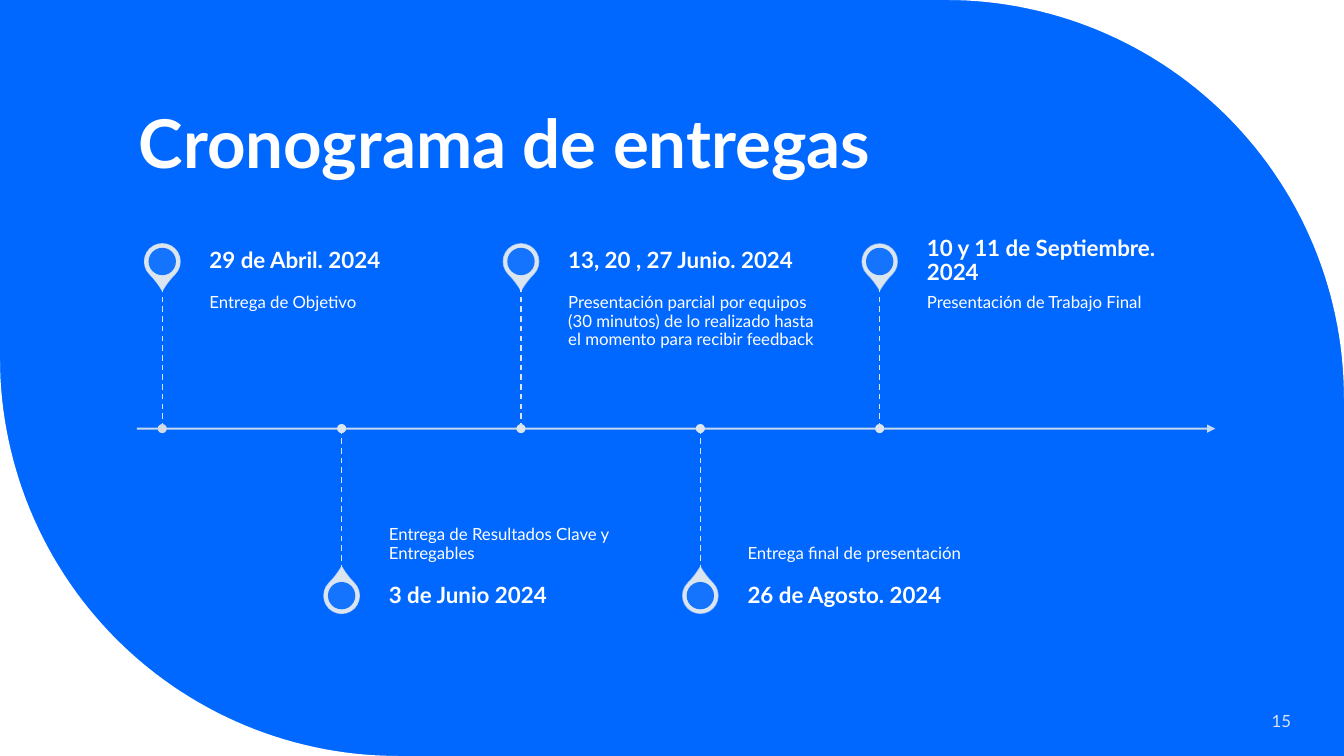
from math import cos, pi, sin

from lxml import etree
from pptx import Presentation
from pptx.dml.color import RGBColor
from pptx.enum import dml, shapes, text
from pptx.oxml.ns import qn
from pptx.util import Cm, Pt

HUES = {"blue": "0068FF", "white": "FFFFFF", "pale": "DAE5EF", "grey": "D0DBE4"}
WIDE, HIGH = 33.87, 19.05
TOP, MID, LOW = text.MSO_ANCHOR.TOP, text.MSO_ANCHOR.MIDDLE, text.MSO_ANCHOR.BOTTOM

deck = Presentation()
deck.slide_width, deck.slide_height = Cm(WIDE), Cm(HIGH)
slide = deck.slides.add_slide(deck.slide_layouts[6])
slide.background.fill.solid()
slide.background.fill.fore_color.rgb = RGBColor.from_string(HUES["blue"])


def paint(fill, hue, alpha=100):
    """Set a solid colour on a fill, with opacity in percent."""
    fill.solid()
    fill.fore_color.rgb = RGBColor.from_string(HUES[hue])
    if alpha < 100:
        for clr in fill._xPr.iter(qn("a:srgbClr")):
            # A shape's own properties also hold its outline colour
            if clr.getparent().getparent() is fill._xPr:
                etree.SubElement(clr, qn("a:alpha")).set("val", str(alpha * 1000))


def write(box, words, size, anchor, pads=(0.25, 0.13, 0.25, 0.13),
          hue="white", bold=False, lead=0.9, align=text.PP_ALIGN.LEFT):
    """Add a text box; box and pads are in cm, pads run left, top, right, bottom."""
    frame = slide.shapes.add_textbox(*map(Cm, box)).text_frame
    frame.word_wrap = True
    frame.vertical_anchor = anchor
    frame.margin_left, frame.margin_top, frame.margin_right, frame.margin_bottom = map(Cm, pads)
    para = frame.paragraphs[0]
    para.alignment, para.line_spacing = align, lead
    run = para.add_run()
    run.text = words
    run.font.name, run.font.size, run.font.bold = "Lato", Pt(size), bold
    run.font.color.rgb = RGBColor.from_string(HUES[hue])


# White rounded corners: top right, then its half turn at bottom left
RAD, STEPS = 10.03, 60
arc = [(WIDE - RAD + RAD * sin(i * pi / 2 / STEPS), RAD - RAD * cos(i * pi / 2 / STEPS))
       for i in range(STEPS + 1)]
for turn in (False, True):
    pts = [(WIDE, 0)] + arc
    if turn:
        pts = [(WIDE - x, HIGH - y) for x, y in pts]
    pts = [(Cm(x), Cm(y)) for x, y in pts]
    build = slide.shapes.build_freeform(*pts[0])
    build.add_line_segments(pts[1:], close=True)
    corner = build.convert_to_shape()
    corner.shadow.inherit = False
    paint(corner.fill, "white")
    corner.line.fill.background()

# Title
write((3.25, 1.07, 27.15, 3.68), "Cronograma de entregas", 48, LOW, bold=True)

# Timeline: axis first, then one stem for each date
AXIS, STEM, HEAD = 10.8, 3.58, 1.27
FIRST, STEP = 4.09, 4.52
PIN, HOLE, DOT = 0.89, 0.69, 0.23
RISE = 4.21
dates = [
    ("29 de Abril. 2024", "Entrega de Objetivo"),
    ("3 de Junio 2024", "Entrega de Resultados Clave y Entregables"),
    ("13, 20 , 27 Junio. 2024", "Presentación parcial por equipos (30 minutos) "
     "de lo realizado hasta el momento para recibir feedback"),
    ("26 de Agosto. 2024", "Entrega final de presentación"),
    ("10 y 11 de Septiembre. 2024", "Presentación de Trabajo Final"),
]
xs = [FIRST + i * STEP for i in range(len(dates))]
ends = [(3.45, AXIS, 30.63, AXIS)]
ends += [(x, AXIS, x, AXIS + (STEM if i % 2 else -STEM)) for i, x in enumerate(xs)]
for i, end in enumerate(ends):
    line = slide.shapes.add_connector(shapes.MSO_CONNECTOR.STRAIGHT, *map(Cm, end))
    paint(line.line.fill, "pale", 100 if i else 90)
    line.line.width = Pt(1 if i else 1.5)
    if i:
        line.line.dash_style = dml.MSO_LINE.DASH
    else:
        tail = etree.SubElement(line.line._get_or_add_ln(), qn("a:tailEnd"))
        tail.set("type", "triangle")
    etree.SubElement(line._element.spPr, qn("a:effectLst"))

for i, (x, (date, note)) in enumerate(zip(xs, dates)):
    below = i % 2 == 1
    spot = AXIS + (RISE if below else -RISE)

    # Pin, its hole and the dot on the axis
    parts = [
        (shapes.MSO_SHAPE.TEAR, spot, PIN, "pale", 100),
        (shapes.MSO_SHAPE.OVAL, spot, HOLE, "blue", 90),
        (shapes.MSO_SHAPE.OVAL, AXIS, DOT, "pale" if i else "grey", 100),
    ]
    for kind, y, size, hue, alpha in parts:
        part = slide.shapes.add_shape(kind, Cm(x - size / 2), Cm(y - size / 2),
                                      Cm(size), Cm(size))
        part.shadow.inherit = False
        paint(part.fill, hue, alpha)
        if kind == shapes.MSO_SHAPE.TEAR:
            part.adjustments[0] = 1.15
            part.rotation = 315 if below else 135
            part.line.width = Pt(1)
            paint(part.line.fill, "pale", 90 - 10 * i)
        else:
            part.line.fill.background()

    # Note beside the stem, date beside the pin
    left, width = x + 1.19, 6.43
    if below:
        write((left, AXIS, width, STEM), note, 12, LOW, (0, 0.3, 0, 0.2))
        top = AXIS + STEM
    else:
        write((left, AXIS - STEM, width, STEM), note, 12, TOP, (0, 0.2, 0.2, 0.3))
        top = AXIS - STEM - HEAD
    write((left, top, width, HEAD), date, 16, MID, (0, 0, 0.28, 0), bold=True)

# Page number
write((28.19, 17.65, 4.6, 1.02), "15", 12, MID, hue="pale", lead=1.0,
      align=text.PP_ALIGN.RIGHT)

deck.save("out.pptx")
